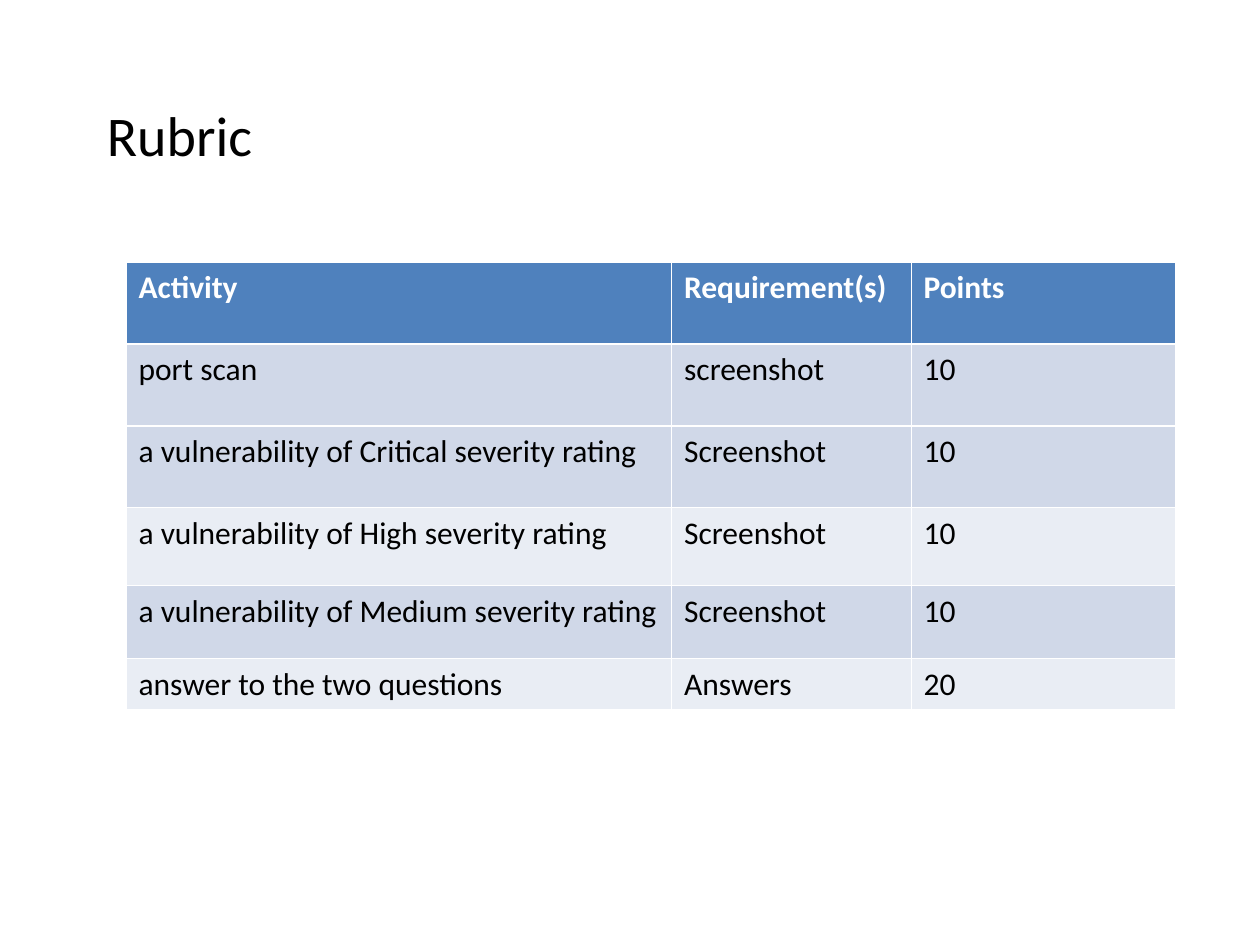
from lxml import etree
from pptx import Presentation
from pptx import util as u
from pptx.dml.color import RGBColor
from pptx.oxml.ns import qn

HEAD = "Rubric"
ROWS = [
    ("Activity", "Requirement(s)", "Points"),
    ("port scan", "screenshot", "10"),
    ("a vulnerability of Critical severity rating", "Screenshot", "10"),
    ("a vulnerability of High severity rating", "Screenshot", "10"),
    ("a vulnerability of Medium severity rating", "Screenshot", "10"),
    ("answer to the two questions", "Answers", "20"),
]
WIDTHS = [4.33, 1.9, 2.1]
HEIGHTS = [0.65, 0.65, 0.65, 0.62, 0.58, 0.4]
COLORS = {"head": "4F81BD", "dark": "D0D8E8", "light": "E9EDF4",
          "white": "FFFFFF", "black": "000000"}
FILLS = ["head", "dark", "dark", "light", "dark", "light"]
THIN, THICK = 0.6, 1.75
RULES = [THIN, THICK, THICK, THIN, THIN, THIN, THIN]


def rgb(name):
    return RGBColor.from_string(COLORS[name])


def style(para, size, color, bold=False):
    font = para.font
    font.name, font.size, font.bold = "Calibri", u.Pt(size), bold
    font.color.rgb = rgb(color)


def border(cell, top, bottom):
    props = cell._tc.get_or_add_tcPr()
    sides = [("lnL", THIN), ("lnR", THIN), ("lnT", top), ("lnB", bottom)]
    for spot, (side, width) in enumerate(sides):
        line = etree.Element(qn(f"a:{side}"), w=str(u.Pt(width)))
        fill = etree.SubElement(line, qn("a:solidFill"))
        etree.SubElement(fill, qn("a:srgbClr"), val=COLORS["white"])
        props.insert(spot, line)


def add_title(slide):
    box = slide.shapes.add_textbox(*map(u.Inches, (0.75, 0.75, 9, 0.65)))
    box.text_frame.word_wrap = True
    para = box.text_frame.paragraphs[0]
    para.text = HEAD
    style(para, 32, "black")


def add_rubric(slide):
    area = map(u.Inches, (1, 2.08, sum(WIDTHS), sum(HEIGHTS)))
    table = slide.shapes.add_table(len(ROWS), len(WIDTHS), *area).table
    for col, width in zip(table.columns, WIDTHS):
        col.width = u.Inches(width)
    for r, values in enumerate(ROWS):
        table.rows[r].height = u.Inches(HEIGHTS[r])
        for c, value in enumerate(values):
            cell = table.cell(r, c)
            cell.text = value
            cell.fill.solid()
            cell.fill.fore_color.rgb = rgb(FILLS[r])
            border(cell, RULES[r], RULES[r + 1])
            style(cell.text_frame.paragraphs[0], 18,
                  "black" if r else "white", r == 0)


def main():
    deck = Presentation()
    deck.slide_width, deck.slide_height = u.Inches(10), u.Inches(7.5)
    slide = deck.slides.add_slide(deck.slide_layouts[6])
    add_title(slide)
    add_rubric(slide)
    deck.save("out.pptx")


if __name__ == "__main__":
    main()
